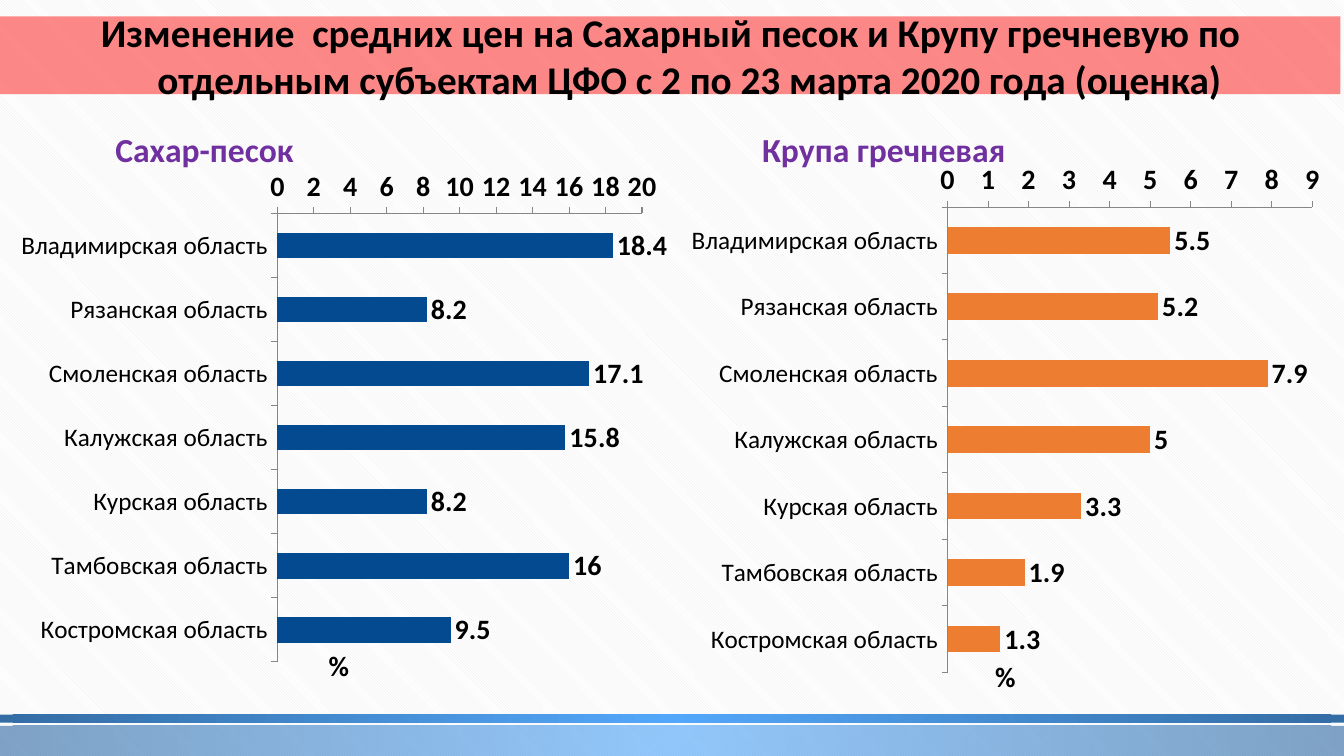
from pptx import Presentation
from pptx import util as u
from pptx.chart.data import CategoryChartData
from pptx.dml.color import RGBColor
from pptx.enum import chart as ch, dml, shapes, text
from pptx.oxml import parse_xml
from pptx.oxml.ns import nsdecls, qn

# Content
TITLE = ("Изменение  средних цен на Сахарный песок и Крупу гречневую "
         "по отдельным субъектам ЦФО с 2 по 23 марта 2020 года (оценка)")
UNIT = "%"
REGIONS = ["Владимирская область", "Рязанская область", "Смоленская область",
           "Калужская область", "Курская область", "Тамбовская область",
           "Костромская область"]
PRODUCTS = [
    dict(name="Сахар-песок", values=[18.4, 8.2, 17.1, 15.8, 8.2, 16, 9.5],
         color="034A90", top_value=20, step=2, height=15.09,
         title_at=(0.163, 0.045), plot_at=(0.414, 0.2, 0.544, 0.749)),
    dict(name="Крупа гречневая", values=[5.5, 5.2, 7.9, 5, 3.3, 1.9, 1.3],
         color="ED7D31", top_value=9, step=1, height=15.37,
         title_at=(0.128, 0.045), plot_at=(0.414, 0.186, 0.544, 0.763)),
]
FOOTER_BARS = [(18.29, 0.76, 50), (18.01, 0.2, 80)]  # top, height, opacity %


class Theme:
    font = "Calibri"
    ink, heading, band, axis = "000000", "7030A0", "FF0000", "868686"
    glow, deep = "2A93FB", "034A90"
    stripe, paper = "E9E7E7", "FFFFFF"
    title, caption, value, region = 28, 24, 20, 18


WIDTH, HEIGHT = 33.87, 19.05
CHART_WIDTH, CHART_TOP = 16.89, 2.36


def rgb(value):
    return RGBColor.from_string(value)


def set_font(font, size, color=Theme.ink, bold=False):
    formats = dict(name=Theme.font, size=u.Pt(size), bold=bold)
    for key, value in formats.items():
        setattr(font, key, value)
    font.color.rgb = rgb(color)


def set_layout(parent, index, inner=False, **place):
    """Give a chart part a fixed place, in fractions of the chart."""
    for old in parent.findall(qn("c:layout")):
        parent.remove(old)
    target = '<c:layoutTarget val="inner"/>' if inner else ""
    modes = "".join(f'<c:{k}Mode val="edge"/>' for k in "xy")
    sizes = "".join(f'<c:{k} val="{v}"/>' for k, v in place.items())
    parent.insert(index, parse_xml(
        f'<c:layout {nsdecls("c")}><c:manualLayout>{target}{modes}{sizes}'
        '</c:manualLayout></c:layout>'))


def add_footer_bar(s, top, height, opacity):
    sp = s.shapes.add_shape(shapes.MSO_SHAPE.RECTANGLE, 0, u.Cm(top),
                            u.Cm(WIDTH), u.Cm(height))
    sp.shadow.inherit = False
    sp.line.fill.background()
    sp.fill.background()
    stops = "".join(
        f'<a:gs pos="{pos}"><a:srgbClr val="{color}">'
        f'<a:alpha val="{opacity * 1000}"/></a:srgbClr></a:gs>'
        for pos, color in ((0, Theme.glow), (100000, Theme.deep)))
    spPr = sp.element.spPr
    spPr.replace(spPr.find(qn("a:noFill")), parse_xml(
        f'<a:gradFill {nsdecls("a")}><a:gsLst>{stops}</a:gsLst>'
        '<a:path path="circle"><a:fillToRect l="50000" t="50000" '
        'r="50000" b="50000"/></a:path></a:gradFill>'))


def add_title(s):
    sp = s.shapes.title
    place = dict(left=0, top=0.41, width=33.78, height=1.96)
    for key, value in place.items():
        setattr(sp, key, u.Cm(value))
    sp.fill.solid()
    sp.fill.fore_color.rgb = rgb(Theme.band)
    color = sp.element.spPr.find(".//" + qn("a:srgbClr"))
    color.append(parse_xml(f'<a:alpha {nsdecls("a")} val="46000"/>'))
    tf = sp.text_frame
    tf.text = TITLE
    formats = dict(word_wrap=True, auto_size=text.MSO_AUTO_SIZE.NONE,
                   vertical_anchor=text.MSO_ANCHOR.MIDDLE)
    for key, value in formats.items():
        setattr(tf, key, value)
    p = tf.paragraphs[0]
    p.alignment = text.PP_ALIGN.CENTER
    # Hanging indent
    pPr = p._p.get_or_add_pPr()
    pPr.set("marL", str(u.Cm(0.95)))
    pPr.set("indent", str(-u.Cm(0.95)))
    set_font(p.runs[0].font, Theme.title, bold=True)


def add_price_chart(s, column, product):
    data = CategoryChartData()
    data.categories = REGIONS
    data.add_series(product["name"], product["values"])
    chart = s.shapes.add_chart(
        ch.XL_CHART_TYPE.BAR_CLUSTERED, u.Cm(column * CHART_WIDTH),
        u.Cm(CHART_TOP), u.Cm(CHART_WIDTH), u.Cm(product["height"]), data).chart
    set_font(chart.font, Theme.value)
    chart.has_legend = False

    # Heading and plot area
    chart.has_title = True
    tf = chart.chart_title.text_frame
    tf.text = product["name"]
    set_font(tf.paragraphs[0].runs[0].font, Theme.caption, Theme.heading, True)
    set_layout(chart.chart_title.element, 1, **dict(zip("xy", product["title_at"])))
    set_layout(chart.element.find(".//" + qn("c:plotArea")), 0, inner=True,
               **dict(zip("xywh", product["plot_at"])))

    # Axes
    regions, values = chart.category_axis, chart.value_axis
    for axis, size, bold in ((regions, Theme.region, False),
                             (values, Theme.value, True)):
        formats = dict(has_major_gridlines=False,
                       major_tick_mark=ch.XL_TICK_MARK.OUTSIDE,
                       minor_tick_mark=ch.XL_TICK_MARK.NONE)
        for key, value in formats.items():
            setattr(axis, key, value)
        axis.format.line.color.rgb = rgb(Theme.axis)
        set_font(axis.tick_labels.font, size, bold=bold)
    regions.reverse_order = True
    scale = dict(minimum_scale=0, maximum_scale=product["top_value"],
                 major_unit=product["step"])
    for key, value in scale.items():
        setattr(values, key, value)
    tf = values.axis_title.text_frame
    tf.text = UNIT
    set_font(tf.paragraphs[0].runs[0].font, Theme.value, bold=True)

    # Bars and their values
    plot = chart.plots[0]
    plot.gap_width = 150
    plot.vary_by_categories = False
    series = plot.series[0]
    series.format.fill.solid()
    series.format.fill.fore_color.rgb = rgb(product["color"])
    labels = series.data_labels
    labels.show_value = True
    labels.position = ch.XL_LABEL_POSITION.OUTSIDE_END
    set_font(labels.font, Theme.value, bold=True)


def main():
    prs = Presentation()
    prs.slide_width, prs.slide_height = u.Cm(WIDTH), u.Cm(HEIGHT)
    s = prs.slides.add_slide(prs.slide_layouts.get_by_name("Title Only"))

    # Striped background
    fill = s.background.fill
    fill.patterned()
    fill.pattern = dml.MSO_PATTERN.DARK_DOWNWARD_DIAGONAL
    fill.fore_color.rgb = rgb(Theme.stripe)
    fill.back_color.rgb = rgb(Theme.paper)

    for bar in FOOTER_BARS:
        add_footer_bar(s, *bar)
    add_title(s)
    for column, product in enumerate(PRODUCTS):
        add_price_chart(s, column, product)
    prs.save("out.pptx")


if __name__ == "__main__":
    main()
